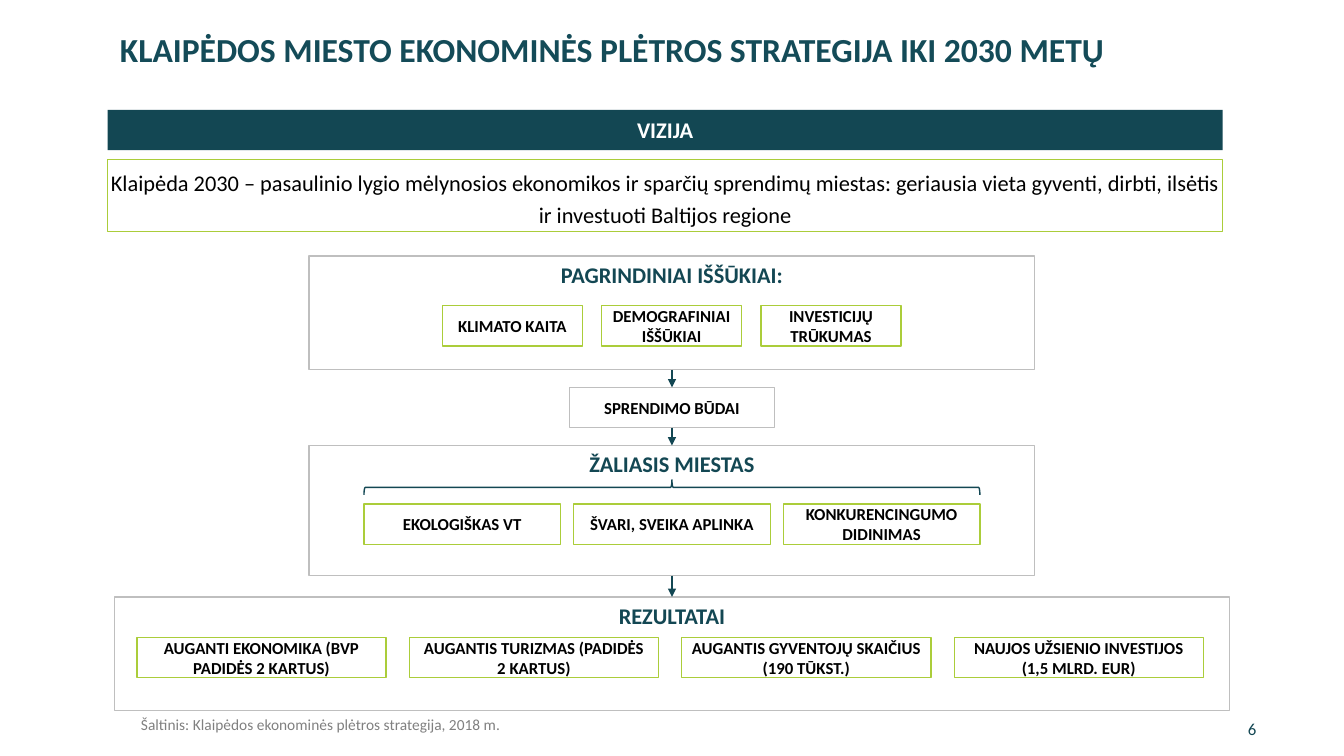
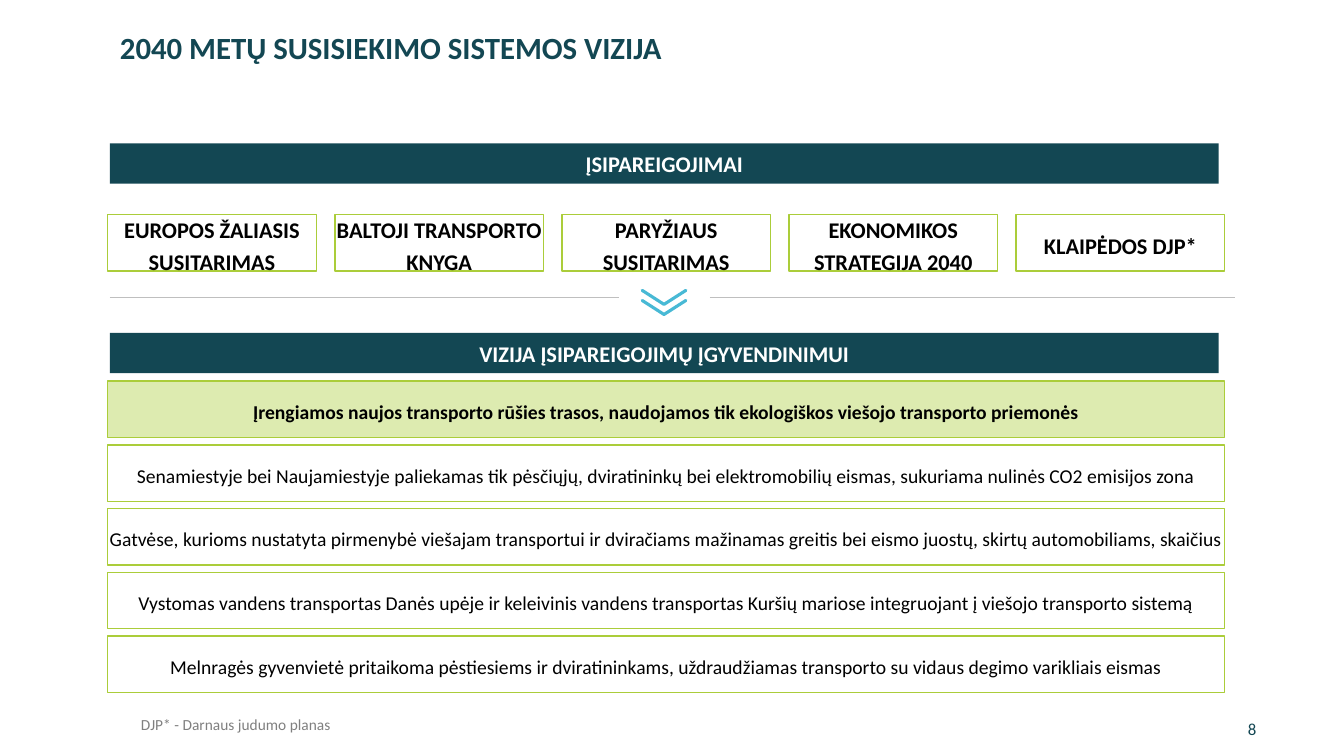
import pptx
import pptx.dml.color
import pptx.enum.shapes
import pptx.enum.text
import pptx.oxml
import pptx.oxml.ns
import pptx.util

Pt = pptx.util.Pt
SHAPE = pptx.enum.shapes.MSO_SHAPE
STRAIGHT = pptx.enum.shapes.MSO_CONNECTOR.STRAIGHT
ALIGN = pptx.enum.text.PP_ALIGN
ANCHOR = pptx.enum.text.MSO_ANCHOR
RGB = pptx.dml.color.RGBColor.from_string

COLORS = {
    "title": "144B58", "dark": "134753", "green": "ABCD3A", "pale": "DDEBB0",
    "grey": "BFBFBF", "note": "808080", "blue": "48B9D5",
    "white": "FFFFFF", "black": "000000",
}
FONT = "Calibri"
CENTER = 480
LEFT = 77
BAR_HEIGHT = 28.8
BOX_HEIGHT = 40.3


def write(shape, text, size=12, color="black", bold=False, align=ALIGN.CENTER,
          anchor=ANCHOR.MIDDLE, spacing=1.0, inset=True):
    frame = shape.text_frame
    frame.auto_size = pptx.enum.text.MSO_AUTO_SIZE.NONE
    frame.word_wrap = True
    frame.vertical_anchor = anchor
    frame.margin_left = frame.margin_right = Pt(7.2 if inset else 0)
    frame.margin_top = frame.margin_bottom = Pt(3.6 if inset else 0)
    paragraph = frame.paragraphs[0]
    paragraph.alignment = align
    paragraph.line_spacing = spacing
    run = paragraph.add_run()
    run.text = text
    run.font.name = FONT
    run.font.size = Pt(size)
    run.font.bold = bold
    run.font.color.rgb = RGB(COLORS[color])


def box(slide, left, top, width, height, text, fill="white", line="green", **style):
    shape = slide.shapes.add_shape(SHAPE.RECTANGLE, Pt(left), Pt(top), Pt(width), Pt(height))
    shape.shadow.inherit = False
    shape.fill.solid()
    shape.fill.fore_color.rgb = RGB(COLORS[fill])
    if line:
        shape.line.color.rgb = RGB(COLORS[line])
        shape.line.width = Pt(1)
    else:
        shape.line.fill.background()
    write(shape, text, **style)
    return shape


BAR = dict(fill="dark", line=None, size=16, color="white", bold=True)
PANEL = dict(line="grey", size=16, color="dark", bold=True, anchor=ANCHOR.TOP)
STATEMENT = dict(spacing=1.2, inset=False)

prs = pptx.Presentation()
prs.slide_width, prs.slide_height = Pt(960), Pt(540)

# Title, footnote and page number of each slide
slides = []
for title, title_size, title_color, note, number in [
    ("KLAIPĖDOS MIESTO EKONOMINĖS PLĖTROS STRATEGIJA IKI 2030 METŲ", 24, "title",
     "Šaltinis: Klaipėdos ekonominės plėtros strategija, 2018 m.", "6"),
    ("2040 METŲ SUSISIEKIMO SISTEMOS VIZIJA", 22, "dark",
     "DJP* - Darnaus judumo planas", "8"),
]:
    slide = prs.slides.add_slide(prs.slide_layouts[5])
    heading = slide.shapes.title
    heading.left, heading.top, heading.width, heading.height = Pt(78.5), Pt(20.2), Pt(815.8), Pt(40.3)
    write(heading, title, size=title_size, color=title_color, bold=True,
          align=ALIGN.LEFT, anchor=ANCHOR.TOP, spacing=0.9)
    footnote = slide.shapes.add_textbox(Pt(93.6), Pt(509), Pt(776.9), Pt(21.6))
    write(footnote, note, size=11, color="note", align=ALIGN.LEFT, anchor=ANCHOR.TOP, spacing=0.9)
    page_number = slide.shapes.add_textbox(Pt(884.2), Pt(506.2), Pt(45.4), Pt(28.8))
    write(page_number, number, color="dark", align=ALIGN.LEFT)
    slides.append(slide)
strategy, transport = slides

# Strategy: vision
box(strategy, LEFT, 78.5, 796.3, BAR_HEIGHT, "VIZIJA", **BAR)
box(strategy, LEFT, 113.8, 796.3, 51.8,
    "Klaipėda 2030 – pasaulinio lygio mėlynosios ekonomikos ir sparčių sprendimų miestas: "
    "geriausia vieta gyventi, dirbti, ilsėtis ir investuoti Baltijos regione",
    size=16, **STATEMENT)

# Strategy: chain from challenges to results
chain = [
    box(strategy, CENTER - width / 2, top, width, height, text, **style)
    for top, width, height, text, style in [
        (182.9, 518.4, 81.3, "PAGRINDINIAI IŠŠŪKIAI:", PANEL),
        (276.7, 146.2, BAR_HEIGHT, "SPRENDIMO BŪDAI", dict(line="grey", bold=True)),
        (318.2, 518.4, 92.9, "ŽALIASIS MIESTAS", PANEL),
        (426.4, 796.3, 81.3, "REZULTATAI", PANEL),
    ]
]
for left, top, width, gap, items in [
    (316, 218.4, 100, 13.8, ["KLIMATO KAITA", "DEMOGRAFINIAI IŠŠŪKIAI", "INVESTICIJŲ TRŪKUMAS"]),
    (259.9, 360, 140.6, 9.2, ["EKOLOGIŠKAS VT", "ŠVARI, SVEIKA APLINKA", "KONKURENCINGUMO DIDINIMAS"]),
    (97.8, 455.2, 178, 16.6, [
        "AUGANTI EKONOMIKA (BVP PADIDĖS 2 KARTUS)", "AUGANTIS TURIZMAS (PADIDĖS 2 KARTUS)",
        "AUGANTIS GYVENTOJŲ SKAIČIUS (190 TŪKST.)", "NAUJOS UŽSIENIO INVESTIJOS (1,5 MLRD. EUR)"]),
]:
    for i, item in enumerate(items):
        box(strategy, left + i * (width + gap), top, width, BAR_HEIGHT, item, bold=True)

# Strategy: brace over the green city items
brace_width, brace_length = 10.8, 440
brace = strategy.shapes.add_shape(
    SHAPE.RIGHT_BRACE, Pt(CENTER - brace_width / 2), Pt(348.1 - brace_length / 2),
    Pt(brace_width), Pt(brace_length))
brace.rotation = 270
brace.shadow.inherit = False
brace.fill.background()
brace.line.color.rgb = RGB(COLORS["dark"])
brace.line.width = Pt(1)

# Transport: commitments
box(transport, 78.5, 102.4, 792, BAR_HEIGHT, "ĮSIPAREIGOJIMAI", **BAR)
for i, commitment in enumerate([
    "EUROPOS ŽALIASIS SUSITARIMAS", "BALTOJI TRANSPORTO KNYGA", "PARYŽIAUS SUSITARIMAS",
    "EKONOMIKOS STRATEGIJA 2040", "KLAIPĖDOS DJP*",
]):
    box(transport, LEFT + i * 162.2, 153.4, 149, BOX_HEIGHT, commitment,
        size=16, bold=True, **STATEMENT)

# Transport: double chevron
for top in (207.4, 214.6):
    builder = transport.shapes.build_freeform(Pt(458.7), Pt(top))
    builder.add_line_segments([(Pt(474.3), Pt(top + 10)), (Pt(489.9), Pt(top))], close=False)
    chevron = builder.convert_to_shape()
    chevron.shadow.inherit = False
    chevron.fill.background()
    chevron.line.color.rgb = RGB(COLORS["blue"])
    chevron.line.width = Pt(2.25)
    chevron.line.fill.solid()
    chevron.line.color.rgb = RGB(COLORS["blue"])
    chevron.element.spPr.find(pptx.oxml.ns.qn("a:ln")).set("cap", "rnd")

# Transport: vision
box(transport, 78.5, 237.8, 792, BAR_HEIGHT, "VIZIJA ĮSIPAREIGOJIMŲ ĮGYVENDINIMUI", **BAR)
for i, statement in enumerate([
    "Įrengiamos naujos transporto rūšies trasos, naudojamos tik ekologiškos viešojo transporto priemonės",
    "Senamiestyje bei Naujamiestyje paliekamas tik pėsčiųjų, dviratininkų bei elektromobilių eismas, "
    "sukuriama nulinės CO2 emisijos zona",
    "Gatvėse, kurioms nustatyta pirmenybė viešajam transportui ir dviračiams mažinamas greitis "
    "bei eismo juostų, skirtų automobiliams, skaičius",
    "Vystomas vandens transportas Danės upėje ir keleivinis vandens transportas Kuršių mariose "
    "integruojant į viešojo transporto sistemą",
    "Melnragės gyvenvietė pritaikoma pėstiesiems ir dviratininkams, uždraudžiamas transporto "
    "su vidaus degimo varikliais eismas",
]):
    box(transport, LEFT, 272.2 + i * 45.55, 797.8, BOX_HEIGHT, statement, size=14,
        bold=i == 0, fill="pale" if i == 0 else "white", **STATEMENT)

# Arrows along the chain and rules beside the chevron
lines = []
for upper, lower in zip(chain, chain[1:]):
    arrow = strategy.shapes.add_connector(STRAIGHT, 0, 0, 0, 0)
    arrow.begin_connect(upper, 2)
    arrow.end_connect(lower, 0)
    lines.append((arrow, "dark", 1, True))
for start, end in [(78.5, 442), (507, 882)]:
    rule = transport.shapes.add_connector(STRAIGHT, Pt(start), Pt(212.4), Pt(end), Pt(212.4))
    lines.append((rule, "grey", 0.5, False))
for connector, color, width, has_head in lines:
    connector.line.color.rgb = RGB(COLORS[color])
    connector.line.width = Pt(width)
    properties = connector.element.spPr
    if has_head:
        head = pptx.oxml.parse_xml(
            f'<a:tailEnd {pptx.oxml.ns.nsdecls("a")} type="triangle"/>')
        properties.find(pptx.oxml.ns.qn("a:ln")).append(head)
    properties.append(pptx.oxml.parse_xml(f'<a:effectLst {pptx.oxml.ns.nsdecls("a")}/>'))

prs.save("out.pptx")
